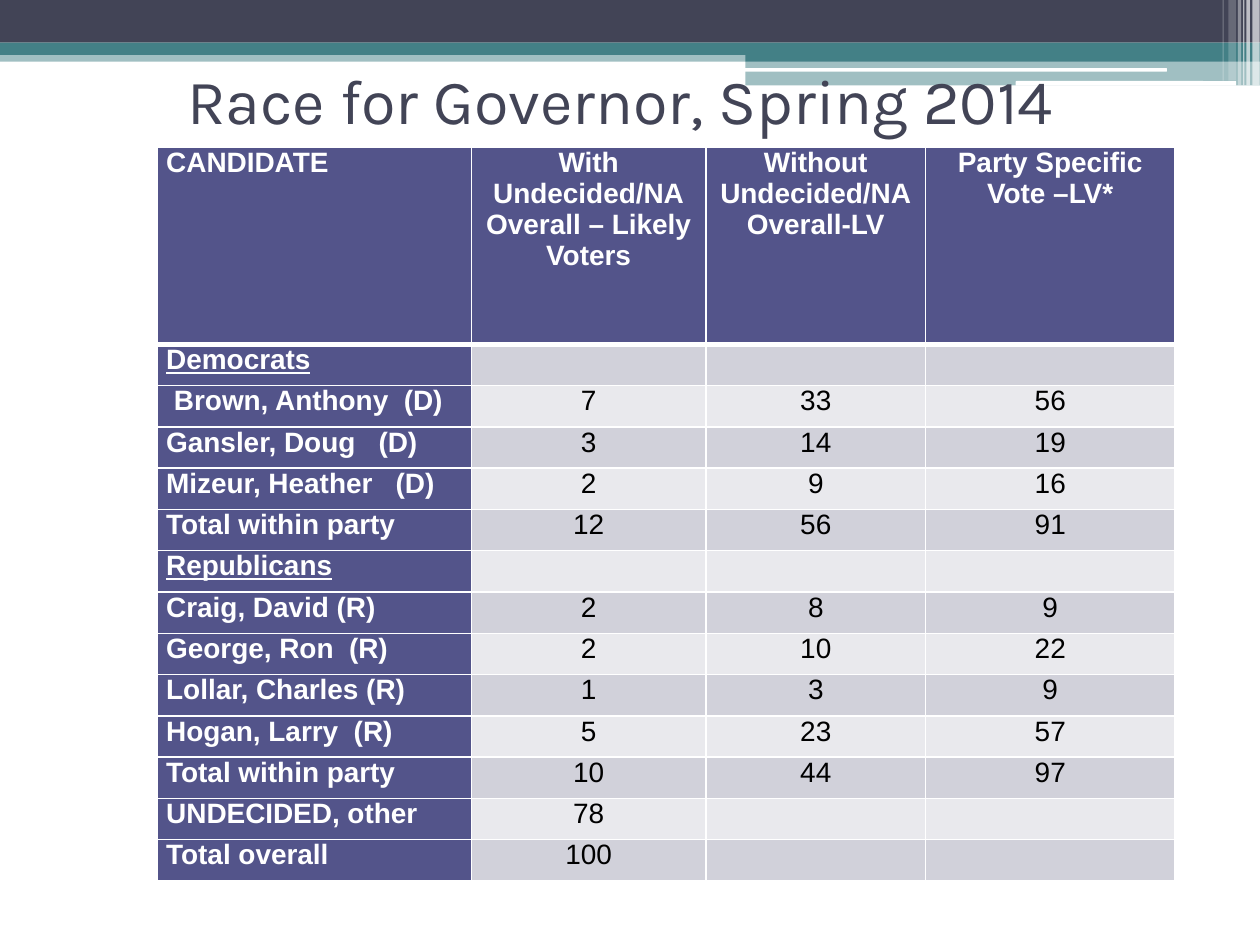
from dataclasses import dataclass

from lxml.etree import SubElement
from pptx import Presentation
from pptx.dml.color import RGBColor
from pptx.enum.shapes import MSO_SHAPE as Preset
from pptx.enum.text import MSO_ANCHOR as Anchor, PP_ALIGN as Align
from pptx.oxml.ns import qn
from pptx.util import Pt


@dataclass(frozen=True)
class Theme:
    """Colours, fonts and type sizes of the slide."""
    dark: str = "424456"
    teal: str = "438086"
    white: str = "FFFFFF"
    black: str = "000000"
    purple: str = "53548A"
    bands: tuple = ("D1D1DA", "E9E9ED")
    title_font: str = "Karla"
    table_font: str = "Arial"
    title_size: int = 36
    table_size: int = 16


THEME = Theme()

BARS = [
    (0, 28.8, 720, 6.4, THEME.teal, 50),
    (0, 0, 720, 24.4, THEME.dark, 100),
    (0, 24.4, 720, 7, THEME.teal, 100),
    (426, 28.2, 294, 7, THEME.teal, 100),
    (426, 35.2, 294, 13.6, THEME.teal, 50),
]
PILLS = [(425.6, 38.9, 241.2, 2), (580.4, 46.3, 126, 2.7)]
STRIPES = [
    (715.6, 4.2, 48.8, 65), (712.2, 2, 48.8, 65), (710.4, 0.7, 48.8, 60),
    (707.3, 2, 48.8, 40), (702, 4.3, 46.1, 20), (698.6, 0.7, 46.1, 30),
]

COLUMN_WIDTHS = [179.4, 134, 125.6, 142.4]
HEADER_HEIGHT, ROW_HEIGHT = 112.8, 23.6
ROWS = [
    ("CANDIDATE", "With Undecided/NA\nOverall – Likely Voters",
     "Without Undecided/NA\vOverall-LV", "Party Specific Vote –LV*"),
    ("Democrats", "", "", ""),
    (" Brown, Anthony  (D)", "7", "33", "56"),
    ("Gansler, Doug   (D)", "3", "14", "19"),
    ("Mizeur, Heather   (D)", "2", "9", "16"),
    ("Total within party", "12", "56", "91"),
    ("Republicans", "", "", ""),
    ("Craig, David (R)", "2", "8", "9"),
    ("George, Ron  (R)", "2", "10", "22"),
    ("Lollar, Charles (R)", "1", "3", "9"),
    ("Hogan, Larry  (R)", "5", "23", "57"),
    ("Total within party", "10", "44", "97"),
    ("UNDECIDED, other", "78", "", ""),
    ("Total overall", "100", "", ""),
]
PARTIES = ("Democrats", "Republicans")


def set_all(target, values):
    """Set each named attribute of the target."""
    for name, value in values.items():
        setattr(target, name, value)


def style_text(frame, color, align, **font):
    """Format every run of a text frame."""
    for paragraph in frame.paragraphs:
        paragraph.alignment = align
        for run in paragraph.runs:
            set_all(run.font, font)
            run.font.color.rgb = RGBColor.from_string(color)


def add_block(slide, preset, left, top, width, height, color, opacity=100):
    """Add a plain filled shape without outline or shadow."""
    shape = slide.shapes.add_shape(preset, Pt(left), Pt(top), Pt(width), Pt(height))
    shape.shadow.inherit = False
    shape.line.fill.background()
    shape.fill.solid()
    shape.fill.fore_color.rgb = RGBColor.from_string(color)
    if opacity < 100:
        color_node = shape.fill._xPr.find(".//" + qn("a:srgbClr"))
        SubElement(color_node, qn("a:alpha"), val=str(opacity * 1000))


def add_banner(slide, left, top):
    """Draw the layered bars, pills and stripes along the top."""
    for x, y, width, height, color, opacity in BARS:
        add_block(slide, Preset.RECTANGLE, left + x, top + y, width, height, color, opacity)
    for x, y, width, height in PILLS:
        add_block(slide, Preset.ROUNDED_RECTANGLE, left + x, top + y, width, height, THEME.white)
    for x, width, height, opacity in STRIPES:
        add_block(slide, Preset.RECTANGLE, left + x, top, width, height, THEME.white, opacity)


def add_title(slide, left, top, width, height, text):
    """Place the centred slide title."""
    frame = slide.shapes.add_textbox(Pt(left), Pt(top), Pt(width), Pt(height)).text_frame
    set_all(frame, {"word_wrap": True, "vertical_anchor": Anchor.MIDDLE,
                    "margin_right": Pt(12), "text": text})
    style_text(frame, THEME.dark, Align.CENTER,
               name=THEME.title_font, size=Pt(THEME.title_size))


def add_borders(cell, **widths):
    """Give a cell white borders, with widths in points by side."""
    properties = cell._tc.get_or_add_tcPr()
    for side in "LRTB":
        width = str(Pt(widths.get(side, 1)))
        line = SubElement(properties, qn("a:ln" + side), w=width)
        fill = SubElement(line, qn("a:solidFill"))
        SubElement(fill, qn("a:srgbClr"), val=THEME.white)


def fill_cell(cell, row, column, text):
    """Write and format one cell according to its place in the table."""
    is_label = row == 0 or column == 0
    set_all(cell, {"text": text, "margin_left": Pt(5), "margin_right": Pt(5),
                   "margin_top": 0, "margin_bottom": 0})
    add_borders(cell, T=3 if row == 1 else 1, B=3 if row == 0 else 1)
    cell.fill.solid()
    color = THEME.purple if is_label else THEME.bands[(row - 1) % 2]
    cell.fill.fore_color.rgb = RGBColor.from_string(color)
    style_text(cell.text_frame, THEME.white if is_label else THEME.black,
               Align.CENTER if column else Align.LEFT,
               name=THEME.table_font, size=Pt(THEME.table_size),
               bold=is_label, underline=text in PARTIES)


def add_results(slide, left, top):
    """Build the table of poll results."""
    heights = [HEADER_HEIGHT] + [ROW_HEIGHT] * (len(ROWS) - 1)
    table = slide.shapes.add_table(len(ROWS), len(COLUMN_WIDTHS), Pt(left), Pt(top),
                                   Pt(sum(COLUMN_WIDTHS)), Pt(sum(heights))).table
    table.first_col = True
    for column, width in zip(table.columns, COLUMN_WIDTHS):
        column.width = Pt(width)
    for row, (values, height) in enumerate(zip(ROWS, heights)):
        table.rows[row].height = Pt(height)
        for column, text in enumerate(values):
            fill_cell(table.cell(row, column), row, column, text)


def main():
    """Build and save the presentation."""
    presentation = Presentation()
    set_all(presentation, {"slide_width": Pt(720), "slide_height": Pt(540)})
    slide = presentation.slides.add_slide(presentation.slide_layouts[6])
    add_banner(slide, 0, 0)
    add_title(slide, 42, 30, 630, 54, "Race for Governor, Spring 2014")
    add_results(slide, 90, 84)
    presentation.save("out.pptx")


if __name__ == "__main__":
    main()
